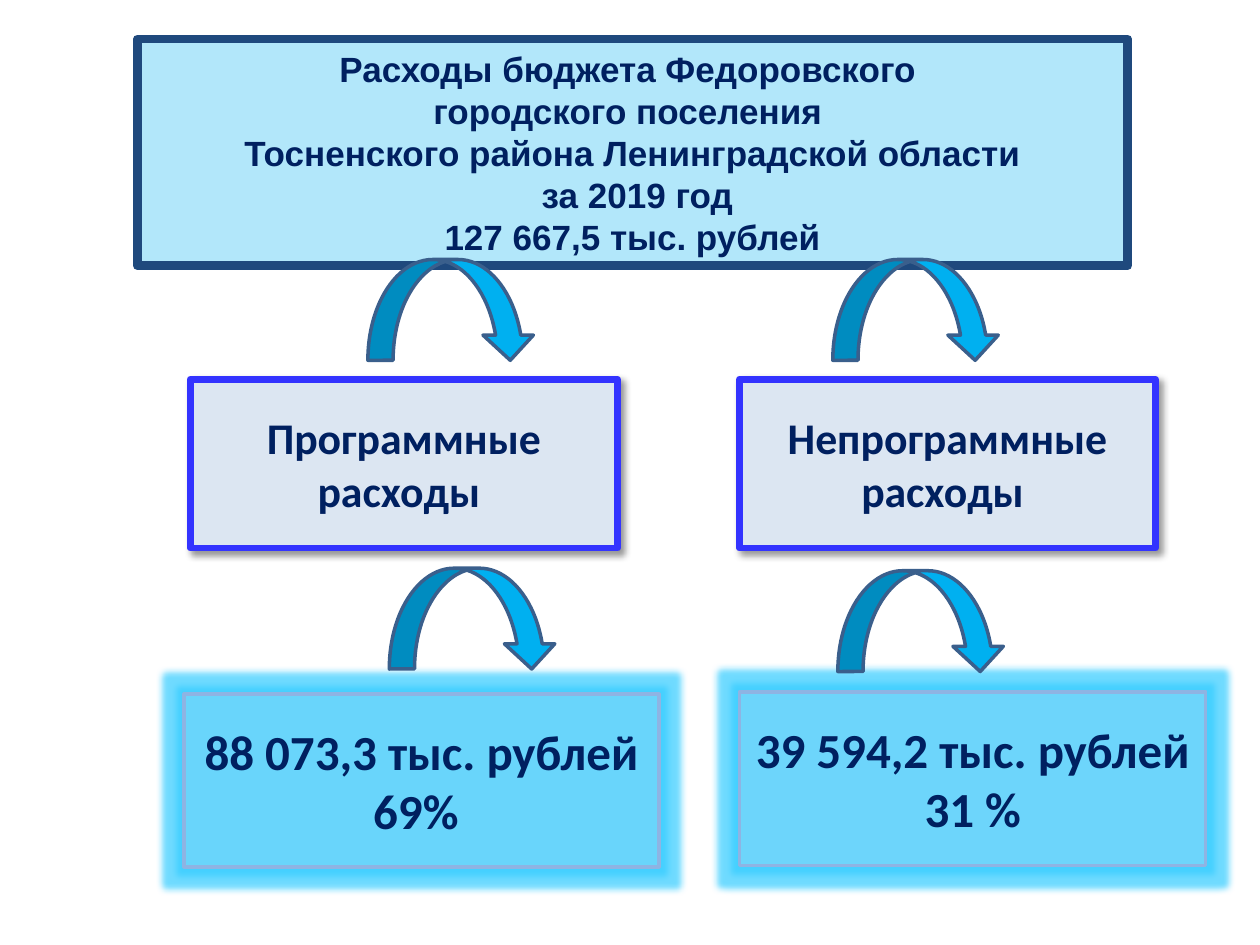
from lxml import etree
from pptx import Presentation
from pptx.dml.color import RGBColor
from pptx.enum import shapes, text
from pptx.oxml import ns
from pptx.util import Inches, Pt

NAVY = RGBColor(0x00, 0x20, 0x60)
SKY = RGBColor(0x00, 0xB0, 0xF0)
FRAME = RGBColor(0x1F, 0x49, 0x7D)
PALE = RGBColor(0xDC, 0xE6, 0xF2)
VIOLET = RGBColor(0x33, 0x33, 0xFF)
SOFT_BLUE = RGBColor(0x8E, 0xB4, 0xE3)
ARROW_EDGE = RGBColor(0x3A, 0x5F, 0x8C)
GLOW = RGBColor(0x33, 0xCC, 0xFF)
BLACK = RGBColor(0, 0, 0)

# Content: lengths in inches as left, top, width, height
TITLE_AREA = (1.09, 0.31, 7.86, 1.8)
TITLE = [
    "Расходы бюджета Федоровского ",
    "городского поселения ",
    "Тосненского района Ленинградской области",
    " за 2019 год",
    "127 667,5 тыс. рублей",
]
CATEGORIES = [
    ("Программные расходы ", (1.51, 3.01, 3.39, 1.34)),
    ("Непрограммные расходы ", (5.87, 3.01, 3.3, 1.34)),
]
AMOUNTS = [
    ("88 073,3 тыс. рублей 69% ", (1.46, 5.51, 3.77, 1.37), 24),
    ("39 594,2 тыс. рублей 31 %", (5.87, 5.49, 3.7, 1.38), 27),
]
ARROW_SIZE = (1.33, 0.8)
ARROW_CORNERS = [(2.92, 2.06), (6.61, 2.06), (3.09, 4.51), (6.65, 4.53)]


def add_alpha(color_element, percent):
    etree.SubElement(color_element, ns.qn("a:alpha"), val=str(percent * 1000))


def paint(shape, fill, edge, edge_width, opacity=100):
    shape.fill.solid()
    shape.fill.fore_color.rgb = fill
    if opacity < 100:
        add_alpha(shape.fill._xPr.find(".//" + ns.qn("a:srgbClr")), opacity)
    shape.line.color.rgb = edge
    shape.line.width = Pt(edge_width)


def add_effect(shape, tag, color, opacity, **settings):
    effects = shape._element.spPr.find(ns.qn("a:effectLst"))
    effect = etree.SubElement(effects, ns.qn(tag), **settings)
    add_alpha(etree.SubElement(effect, ns.qn("a:srgbClr"), val=str(color)), opacity)


def write(shape, lines, font, size):
    frame = shape.text_frame
    frame.word_wrap = True
    frame.auto_size = text.MSO_AUTO_SIZE.NONE
    frame.vertical_anchor = text.MSO_ANCHOR.MIDDLE
    frame.text = "\n".join(lines)
    for para in frame.paragraphs:
        para.alignment = text.PP_ALIGN.CENTER
        para.font.name = font
        para.font.size = Pt(size)
        para.font.bold = True
        para.font.color.rgb = NAVY


def add_shape(page, kind, area):
    shape = page.shapes.add_shape(kind, *map(Inches, area))
    shape.shadow.inherit = False
    return shape


def main():
    deck = Presentation()
    deck.slide_width, deck.slide_height = Inches(10), Inches(7.5)
    page = deck.slides.add_slide(deck.slide_layouts[5])
    rectangle = shapes.MSO_SHAPE.RECTANGLE

    # Title with the budget total
    title = page.shapes.title
    title.left, title.top, title.width, title.height = map(Inches, TITLE_AREA)
    paint(title, SKY, FRAME, 5, 30)
    write(title, TITLE, "Arial", 20)

    # Kinds of spending
    for label, area in CATEGORIES:
        box = add_shape(page, rectangle, area)
        paint(box, PALE, VIOLET, 4)
        add_effect(box, "a:outerShdw", BLACK, 40, blurRad=str(Pt(4)),
                   dist=str(Pt(3)), dir=str(45 * 60000), algn="tl", rotWithShape="0")
        write(box, [label], "Calibri", 25)

    # Amounts and shares
    for label, area, opacity in AMOUNTS:
        box = add_shape(page, rectangle, area)
        paint(box, PALE, SOFT_BLUE, 2, opacity)
        add_effect(box, "a:glow", GLOW, 70, rad=str(Pt(8)))
        write(box, [label], "Calibri", 28)

    # Curved arrows between the levels
    for corner in ARROW_CORNERS:
        arrow = add_shape(page, shapes.MSO_SHAPE.CURVED_DOWN_ARROW, corner + ARROW_SIZE)
        paint(arrow, SKY, ARROW_EDGE, 2)

    deck.save("out.pptx")


if __name__ == "__main__":
    main()
